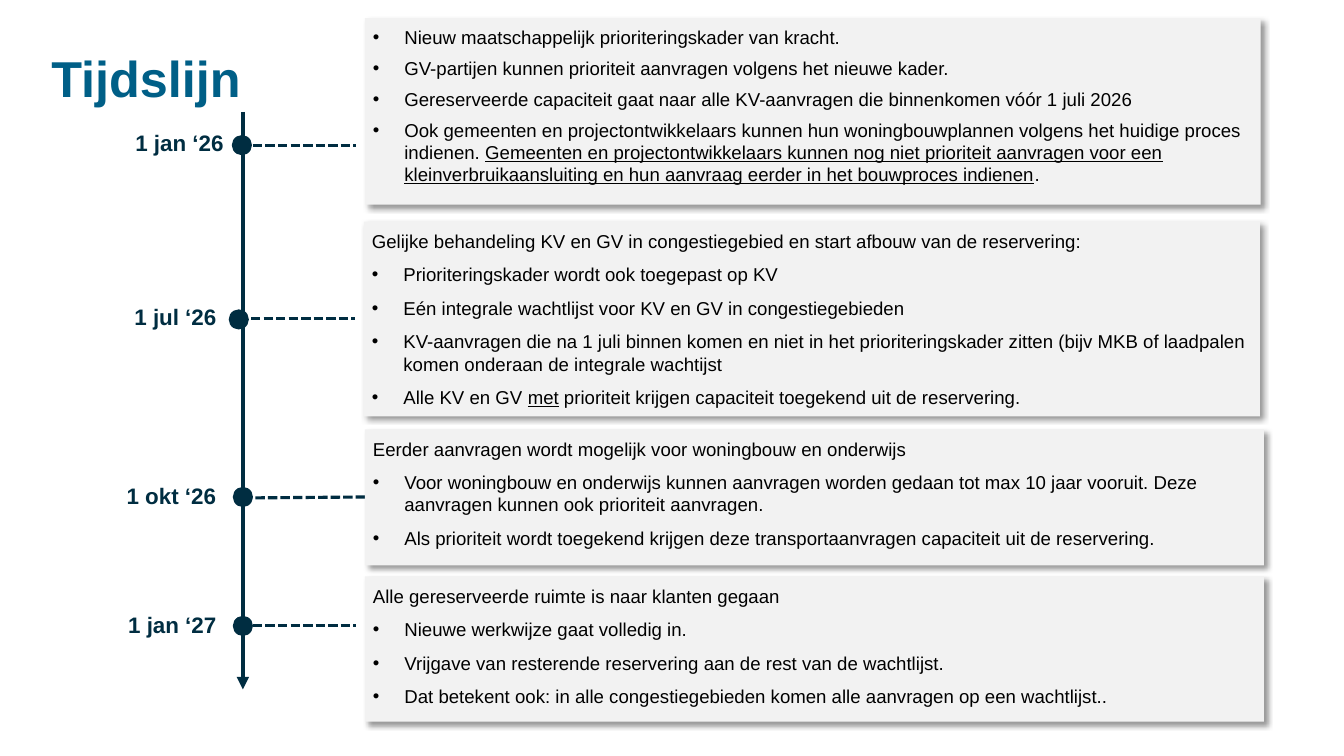
from dataclasses import dataclass

from lxml import etree
from pptx import Presentation
from pptx.dml.color import RGBColor
from pptx.enum.dml import MSO_LINE
from pptx.enum.shapes import MSO_CONNECTOR, MSO_SHAPE
from pptx.enum.text import MSO_ANCHOR, PP_ALIGN
from pptx.oxml import parse_xml
from pptx.oxml.ns import nsdecls, qn
from pptx.util import Pt

STRAIGHT = MSO_CONNECTOR.STRAIGHT
OVAL, RECTANGLE = MSO_SHAPE.OVAL, MSO_SHAPE.RECTANGLE
TOP, MIDDLE = MSO_ANCHOR.TOP, MSO_ANCHOR.MIDDLE
LEFT, CENTER = PP_ALIGN.LEFT, PP_ALIGN.CENTER
DASH = MSO_LINE.SQUARE_DOT

FONT = "Arial"
NAVY, TEAL, GREY, BLACK = "002D41", "005F87", "F2F2F2", "000000"
DOT_SIZE = 14.4
BULLET_INDENT = 22.5
PANEL_INSET = 5.76


@dataclass
class Milestone:
    date: str
    date_at: tuple[float, float]
    dot_at: tuple[float, float]
    dash: tuple[float, float, float, float]
    panel: tuple[float, float, float, float]
    heading: str
    bullets: list[str]
    space_after: float = 8


MILESTONES = [
    Milestone(
        "1 jan ‘26", (92.2, 90.7), (165.6, 96.5),
        (180.7, 103.7, 254.2, 103.7), (260.6, 13, 640, 133.2), "",
        [
            "Nieuw maatschappelijk prioriteringskader van kracht.",
            "GV-partijen kunnen prioriteit aanvragen volgens het nieuwe kader.",
            "Gereserveerde capaciteit gaat naar alle KV-aanvragen die binnenkomen "
            "vóór 1 juli 2026",
            "Ook gemeenten en projectontwikkelaars kunnen hun woningbouwplannen "
            "volgens het huidige proces indienen. _Gemeenten en "
            "projectontwikkelaars kunnen nog niet prioriteit aanvragen voor een "
            "kleinverbruikaansluiting en hun aanvraag eerder in het bouwproces "
            "indienen_.",
        ],
        space_after=6,
    ),
    Milestone(
        "1 jul ‘26", (89.3, 215.3), (163.4, 221),
        (179.3, 227.5, 253.4, 227.5), (259.9, 158.4, 640, 139),
        "Gelijke behandeling KV en GV in congestiegebied en start afbouw van de "
        "reservering:",
        [
            "Prioriteringskader wordt ook toegepast op KV",
            "Eén integrale wachtlijst voor KV en GV in congestiegebieden",
            "KV-aanvragen die na 1 juli binnen komen en niet in het "
            "prioriteringskader zitten (bijv MKB of laadpalen komen onderaan de "
            "integrale wachtijst",
            "Alle KV en GV _met_ prioriteit krijgen capaciteit toegekend uit de "
            "reservering.",
        ],
    ),
    Milestone(
        "1 okt ‘26", (86.4, 342.7), (166.3, 347.8),
        (173.5, 355.7, 260.6, 355), (260.6, 306.7, 642.2, 97.2),
        "Eerder aanvragen wordt mogelijk voor woningbouw en onderwijs",
        [
            "Voor woningbouw en onderwijs kunnen aanvragen worden gedaan tot max "
            "10 jaar vooruit. Deze aanvragen kunnen ook prioriteit aanvragen.",
            "Als prioriteit wordt toegekend krijgen deze transportaanvragen "
            "capaciteit uit de reservering.",
        ],
    ),
    Milestone(
        "1 jan ‘27", (87.1, 434.9), (166.3, 439.9),
        (180.7, 447.1, 254.2, 447.1), (260.6, 411.8, 642.2, 103.7),
        "Alle gereserveerde ruimte is naar klanten gegaan",
        [
            "Nieuwe werkwijze gaat volledig in.",
            "Vrijgave van resterende reservering aan de rest van de wachtlijst.",
            "Dat betekent ook: in alle congestiegebieden komen alle aanvragen op "
            "een wachtlijst..",
        ],
    ),
]


def color(value: str) -> RGBColor:
    return RGBColor.from_string(value)


def set_frame(frame, inset: float = 0, anchor=TOP, wrap: bool = True) -> None:
    frame.word_wrap = wrap
    frame.vertical_anchor = anchor
    frame.margin_left = frame.margin_right = Pt(inset)
    frame.margin_top = frame.margin_bottom = Pt(inset)


def write(para, text: str, *, size: float, fill: str, bold: bool = False,
          align=LEFT, line_spacing: float = 1, space_after: float = 0,
          bullet: bool = False) -> None:
    para.alignment = align
    para.line_spacing = line_spacing
    para.space_after = Pt(space_after)
    if bullet:
        properties = para._p.get_or_add_pPr()
        properties.set("marL", str(Pt(BULLET_INDENT)))
        properties.set("indent", str(-Pt(BULLET_INDENT)))
        etree.SubElement(properties, qn("a:buFont"), typeface=FONT)
        etree.SubElement(properties, qn("a:buChar"), char="•")
    for index, part in enumerate(text.split("_")):
        span = para.add_run()
        span.text = part
        span.font.name = FONT
        span.font.size = Pt(size)
        span.font.bold = bold
        span.font.color.rgb = color(fill)
        if index % 2:
            span.font.underline = True


def add_label(page, place: tuple[float, float, float, float], text: str, *,
              anchor=TOP, wrap: bool = True, **text_format) -> None:
    box = page.shapes.add_textbox(*map(Pt, place))
    set_frame(box.text_frame, anchor=anchor, wrap=wrap)
    write(box.text_frame.paragraphs[0], text, **text_format)


def add_line(page, ends: tuple[float, float, float, float], width: float):
    line = page.shapes.add_connector(STRAIGHT, *map(Pt, ends))
    line.line.color.rgb = color(NAVY)
    line.line.width = Pt(width)
    etree.SubElement(line._element.spPr, qn("a:effectLst"))
    return line


def add_block(page, kind, place: tuple[float, float, float, float], fill: str):
    block = page.shapes.add_shape(kind, *map(Pt, place))
    block.shadow.inherit = False
    block.fill.solid()
    block.fill.fore_color.rgb = color(fill)
    block.line.fill.background()
    return block


def add_panel(page, milestone: Milestone) -> None:
    panel = add_block(page, RECTANGLE, milestone.panel, GREY)
    panel._element.spPr.find(qn("a:effectLst")).append(parse_xml(
        f'<a:outerShdw {nsdecls("a")} blurRad="{Pt(4)}" dist="{Pt(3)}" '
        f'dir="2700000" algn="tl" rotWithShape="0"><a:srgbClr val="{BLACK}">'
        '<a:alpha val="40000"/></a:srgbClr></a:outerShdw>'))
    frame = panel.text_frame
    set_frame(frame, PANEL_INSET)
    lines = [(text, True) for text in milestone.bullets]
    if milestone.heading:
        lines.insert(0, (milestone.heading, False))
    for index, (text, bullet) in enumerate(lines):
        para = frame.add_paragraph() if index else frame.paragraphs[0]
        write(para, text, size=13.3, fill=BLACK, bullet=bullet,
              space_after=milestone.space_after)


def add_milestone(page, milestone: Milestone) -> None:
    add_block(page, OVAL, (*milestone.dot_at, DOT_SIZE, DOT_SIZE), NAVY)
    add_line(page, milestone.dash, 2.25).line.dash_style = DASH
    add_label(page, (*milestone.date_at, 72, 24.5), milestone.date,
              anchor=MIDDLE, wrap=False, size=16, fill=NAVY, bold=True,
              align=CENTER, line_spacing=0.9)
    add_panel(page, milestone)


def main() -> None:
    deck = Presentation()
    deck.slide_width, deck.slide_height = Pt(960), Pt(540)
    page = deck.slides.add_slide(deck.slide_layouts[6])
    add_label(page, (36.7, 36.7, 708.5, 28.8), "Tijdslijn", size=36, fill=TEAL,
              bold=True, line_spacing=0.95)
    axis = add_line(page, (173.5, 79.9, 173.5, 492.5), 3)
    etree.SubElement(axis.line._get_or_add_ln(), qn("a:tailEnd"), type="triangle")
    for milestone in MILESTONES:
        add_milestone(page, milestone)
    deck.save("out.pptx")


if __name__ == "__main__":
    main()
